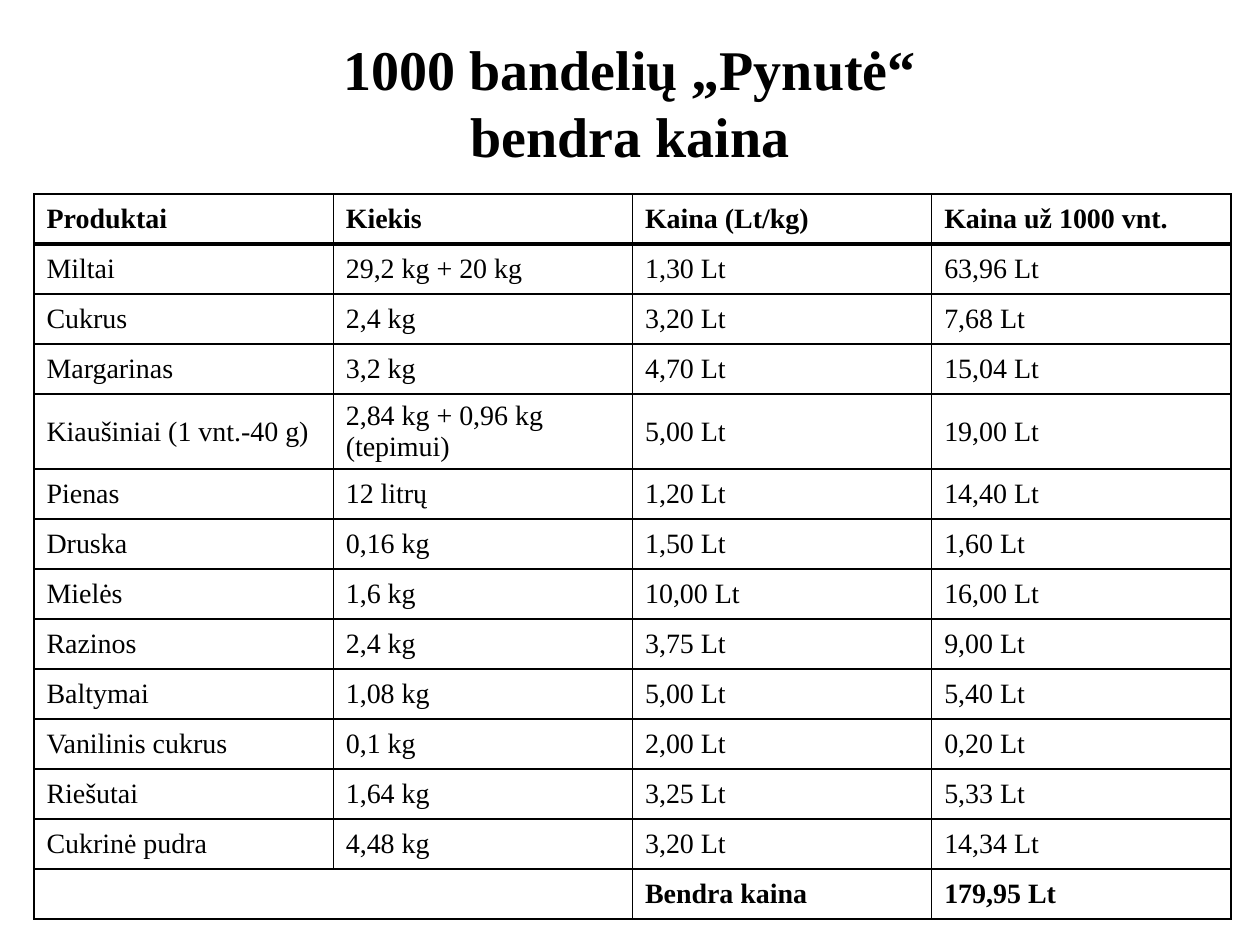
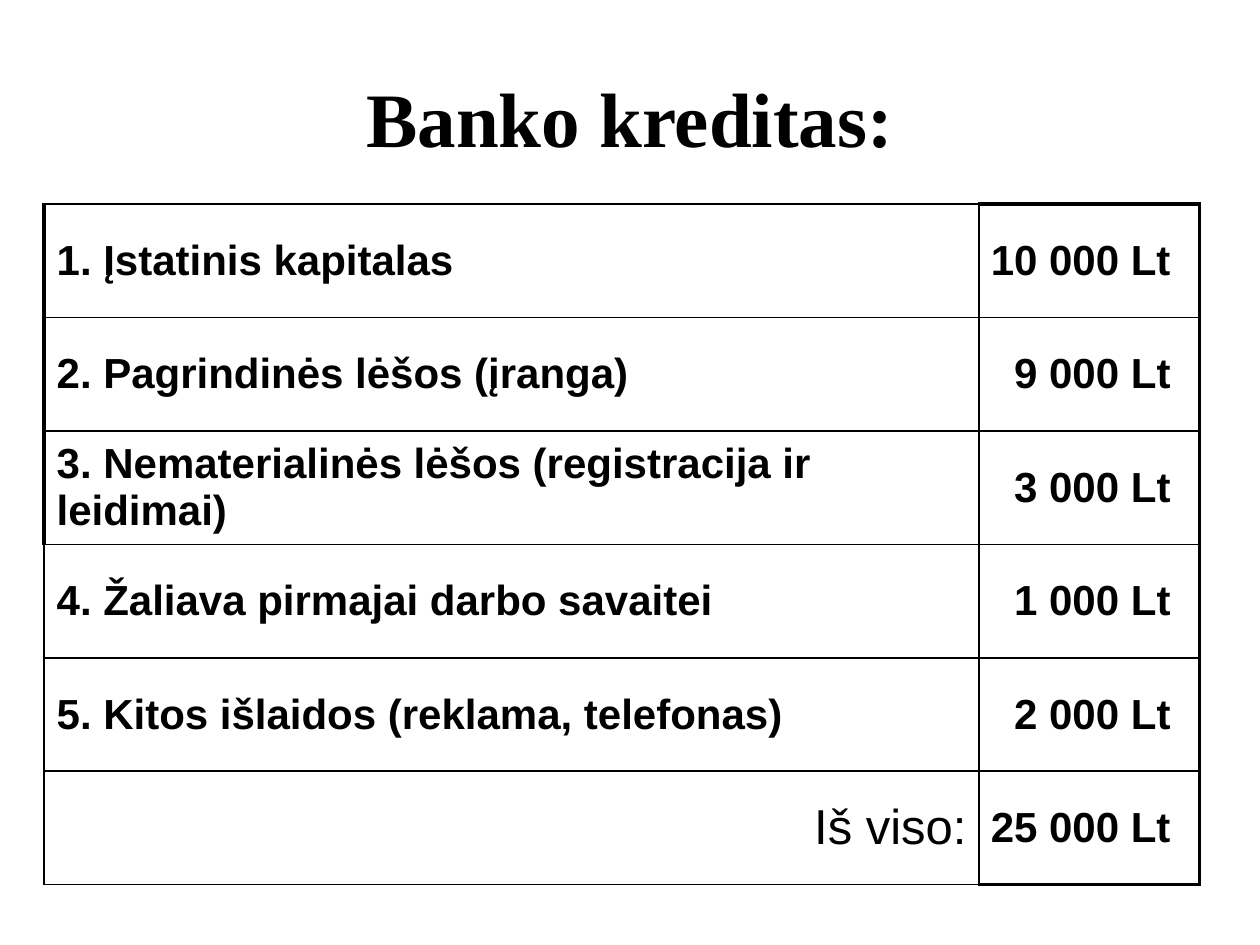
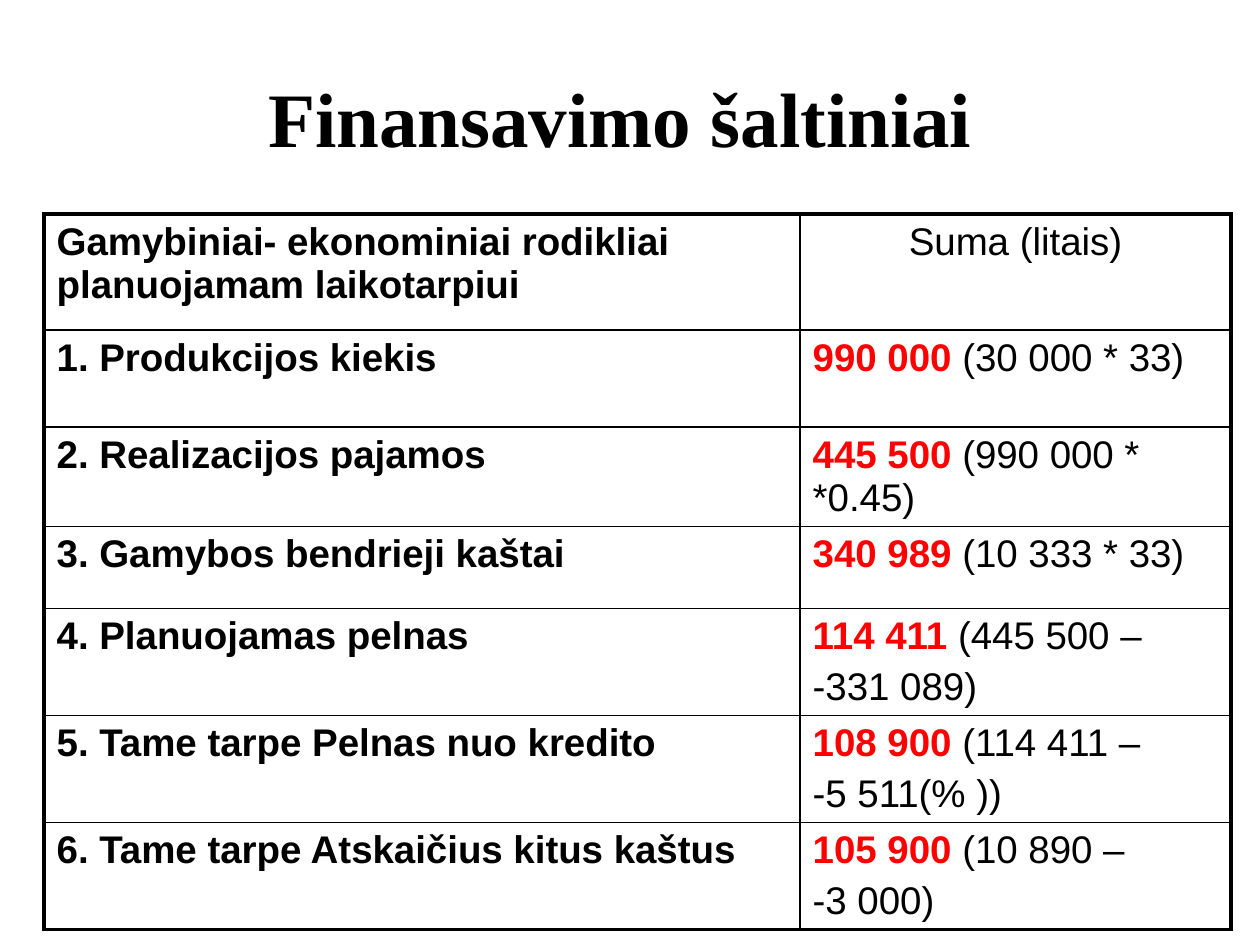
from dataclasses import dataclass

from lxml.etree import SubElement
from pptx import Presentation
from pptx.dml.color import RGBColor
from pptx.enum.text import MSO_ANCHOR as Anchor, PP_ALIGN as Align
from pptx.oxml import parse_xml
from pptx.oxml.ns import nsdecls, qn
from pptx.slide import Slide
from pptx.table import _Cell as Cell
from pptx.util import Inches, Pt

SERIF, SANS = "Times New Roman", "Arial"
BLACK, WHITE, RED = "000000", "FFFFFF", "FF0000"
THIN, HEAVY = 1, 2.25
SIDES = {"left": "lnL", "right": "lnR", "top": "lnT", "bottom": "lnB"}

Edge = tuple[int, int, str]


@dataclass(frozen=True)
class Span:
    """A piece of text with its own weight and colour."""
    text: str
    bold: bool = False
    color: str = BLACK


@dataclass(frozen=True)
class Entry:
    """The content of one table cell, one tuple of spans per paragraph."""
    lines: tuple[tuple[Span, ...], ...]
    size: int
    align: Align = Align.LEFT
    margin_left: float = 0.1
    margin_right: float = 0.1


@dataclass(frozen=True)
class Sheet:
    """A page with a title above a table."""
    title: str
    title_size: int
    title_height: float
    left: float
    top: float
    columns: list[float]
    rows: list[float]
    entries: list[list[Entry | None]]
    heavy: set[Edge]
    font: str
    anchor: Anchor = Anchor.MIDDLE
    opacity: int = 0
    margin_top: float = 0.05
    margin_bottom: float = 0.05


def rgb(value: str) -> RGBColor:
    """Turn a hex string into a colour."""
    return RGBColor.from_string(value)


def plain(text: str, size: int, bold: bool = False, **options) -> Entry:
    """Make an entry with a single span."""
    return Entry(((Span(text, bold),),), size, **options)


def add_title(page: Slide, sheet: Sheet) -> None:
    """Write the centred page title."""
    box = page.shapes.add_textbox(Inches(0.5), Inches(0.3), Inches(9), Inches(sheet.title_height))
    frame = box.text_frame
    frame.word_wrap = True
    frame.vertical_anchor = Anchor.MIDDLE
    para = frame.paragraphs[0]
    para.text = sheet.title
    para.alignment = Align.CENTER
    font = para.font
    font.name, font.size, font.bold = SERIF, Pt(sheet.title_size), True
    font.color.rgb = rgb(BLACK)


def fill_cell(cell: Cell, opacity: int) -> None:
    """Give the cell a translucent white fill, or none at all."""
    if not opacity:
        cell.fill.background()
        return
    cell.fill.solid()
    cell.fill.fore_color.rgb = rgb(WHITE)
    color = cell._tc.tcPr.find(".//" + qn("a:srgbClr"))
    SubElement(color, qn("a:alpha"), val=str(opacity * 1000))


def border_cell(cell: Cell, widths: dict[str, float]) -> None:
    """Draw the four borders of a cell."""
    properties = cell._tc.get_or_add_tcPr()
    for index, (side, tag) in enumerate(SIDES.items()):
        properties.insert(index, parse_xml(
            f'<a:{tag} {nsdecls("a")} w="{Pt(widths[side])}"><a:solidFill>'
            f'<a:srgbClr val="{BLACK}"/></a:solidFill></a:{tag}>'))


def write_cell(cell: Cell, entry: Entry, font_name: str) -> None:
    """Write the paragraphs of an entry into a cell."""
    cell.margin_left, cell.margin_right = Inches(entry.margin_left), Inches(entry.margin_right)
    frame = cell.text_frame
    for index, spans in enumerate(entry.lines):
        para = frame.add_paragraph() if index else frame.paragraphs[0]
        para.alignment = entry.align
        if index:
            para.space_before = Pt(entry.size * 0.2)
        para.font.name, para.font.size = font_name, Pt(entry.size)
        for span in spans:
            run = para.add_run()
            run.text = span.text
            font = para.font if len(spans) == 1 else run.font
            font.bold = span.bold
            font.color.rgb = rgb(span.color)


def add_sheet_table(page: Slide, sheet: Sheet) -> None:
    """Draw the table, merging an empty entry with the one after it."""
    table = page.shapes.add_table(
        len(sheet.rows), len(sheet.columns), Inches(sheet.left), Inches(sheet.top),
        Inches(sum(sheet.columns)), Inches(sum(sheet.rows))).table
    table.first_row = table.horz_banding = False
    for column, width in zip(table.columns, sheet.columns):
        column.width = Inches(width)
    for row, height in zip(table.rows, sheet.rows):
        row.height = Inches(height)
    for r, entries in enumerate(sheet.entries):
        for c, entry in enumerate(entries):
            cell = table.cell(r, c)
            cell.vertical_anchor = sheet.anchor
            cell.margin_top = Inches(sheet.margin_top)
            cell.margin_bottom = Inches(sheet.margin_bottom)
            fill_cell(cell, sheet.opacity)
            border_cell(cell, {s: HEAVY if (r, c, s) in sheet.heavy else THIN for s in SIDES})
            if entry:
                write_cell(cell, entry, sheet.font)
        if entries[0] is None:
            table.cell(r, 0).merge(table.cell(r, 1))


def cost_sheet() -> Sheet:
    """Describe the cost of a thousand buns."""
    header = ("Produktai", "Kiekis", "Kaina (Lt/kg)", "Kaina už 1000 vnt.")
    products = [
        ("Miltai", "29,2 kg + 20 kg", "1,30 Lt", "63,96 Lt"),
        ("Cukrus", "2,4 kg", "3,20 Lt", "7,68 Lt"),
        ("Margarinas", "3,2 kg", "4,70 Lt", "15,04 Lt"),
        ("Kiaušiniai (1 vnt.-40 g)", "2,84 kg + 0,96 kg (tepimui)", "5,00 Lt", "19,00 Lt"),
        ("Pienas", "12 litrų", "1,20 Lt", "14,40 Lt"),
        ("Druska", "0,16 kg", "1,50 Lt", "1,60 Lt"),
        ("Mielės", "1,6 kg", "10,00 Lt", "16,00 Lt"),
        ("Razinos", "2,4 kg", "3,75 Lt", "9,00 Lt"),
        ("Baltymai", "1,08 kg", "5,00 Lt", "5,40 Lt"),
        ("Vanilinis cukrus", "0,1 kg", "2,00 Lt", "0,20 Lt"),
        ("Riešutai", "1,64 kg", "3,25 Lt", "5,33 Lt"),
        ("Cukrinė pudra", "4,48 kg", "3,20 Lt", "14,34 Lt"),
    ]
    total = [None, None, plain("Bendra kaina", 16, True), plain("179,95 Lt", 16, True)]
    entries = [[plain(text, 16, True) for text in header]]
    entries += [[plain(text, 16) for text in product] for product in products]
    entries.append(total)
    heavy = {edge for c in range(4) for edge in ((0, c, "bottom"), (1, c, "top"))}
    shares = [1] * 4 + [1.5] + [1] * 9
    rows = [5.76 * share / sum(shares) for share in shares]
    return Sheet("1000 bandelių „Pynutė“\nbendra kaina", 32, 1.01, 0.27, 1.54,
                 [9.5 / 4] * 4, rows, entries, heavy, SERIF, opacity=24,
                 margin_top=0.03, margin_bottom=0.03)


def credit_sheet() -> Sheet:
    """Describe the uses of the bank credit."""
    items = [
        ("1. Įstatinis kapitalas", "10 000 Lt"),
        ("2. Pagrindinės lėšos (įranga)", "9 000 Lt"),
        ("3. Nematerialinės lėšos (registracija ir leidimai)", "3 000 Lt"),
        ("4. Žaliava pirmajai darbo savaitei", "1 000 Lt"),
        ("5. Kitos išlaidos (reklama, telefonas)", "2 000 Lt"),
        ("Iš viso:", "25 000 Lt"),
    ]
    last = len(items) - 1
    entries = [[plain(name, 24, True),
                plain(amount, 24, True, align=Align.RIGHT, margin_left=0.05, margin_right=0.23)]
               for name, amount in items]
    entries[last][0] = plain(items[last][0], 28, align=Align.RIGHT)
    heavy = {(r, 0, "left") for r in range(3)} | {(r, 1, "right") for r in range(len(items))}
    heavy |= {(0, 1, "top"), (last, 1, "bottom")}
    return Sheet("Banko kreditas:", 44, 1.25, 0.35, 1.62, [7.42, 1.75],
                 [0.9] * len(items), entries, heavy, SANS, opacity=27)


def funding_sheet() -> Sheet:
    """Describe the planned production and income figures."""
    figures = [
        ("1. Produkcijos kiekis", "990 000", " (30 000 * 33)"),
        ("2. Realizacijos pajamos", "445 500", " (990 000 * *0.45)"),
        ("3. Gamybos bendrieji kaštai", "340 989", " (10 333 * 33)"),
        ("4. Planuojamas pelnas", "114 411", " (445 500 –", "-331 089)"),
        ("5. Tame tarpe Pelnas nuo kredito", "108 900", " (114 411 –", "-5 511(% ))"),
        ("6. Tame tarpe Atskaičius kitus kaštus", "105 900", " (10 890 –", "-3 000)"),
    ]
    entries = [[plain("Gamybiniai- ekonominiai rodikliai planuojamam laikotarpiui", 22, True),
                plain("Suma (litais)", 22, align=Align.CENTER)]]
    for name, amount, formula, *rest in figures:
        lines = ((Span(amount, True, RED), Span(formula)), *((Span(text),) for text in rest))
        entries.append([plain(name, 22, True), Entry(lines, 22)])
    last = len(figures)
    heavy = {edge for r in range(last + 1) for edge in ((r, 0, "left"), (r, 1, "right"))}
    heavy |= {edge for c in range(2) for edge in ((0, c, "top"), (last, c, "bottom"))}
    return Sheet("Finansavimo šaltiniai ", 44, 1.25, 0.35, 1.7, [6, 3.42],
                 [0.92, 0.77, 0.79, 0.65] + [0.85] * 3, entries, heavy, SANS, Anchor.TOP,
                 margin_bottom=0)


def main() -> None:
    """Build the deck."""
    deck = Presentation()
    deck.slide_width, deck.slide_height = Inches(10), Inches(7.5)
    for sheet in (cost_sheet(), credit_sheet(), funding_sheet()):
        page = deck.slides.add_slide(deck.slide_layouts[6])
        add_title(page, sheet)
        add_sheet_table(page, sheet)
    deck.save("out.pptx")


if __name__ == "__main__":
    main()
